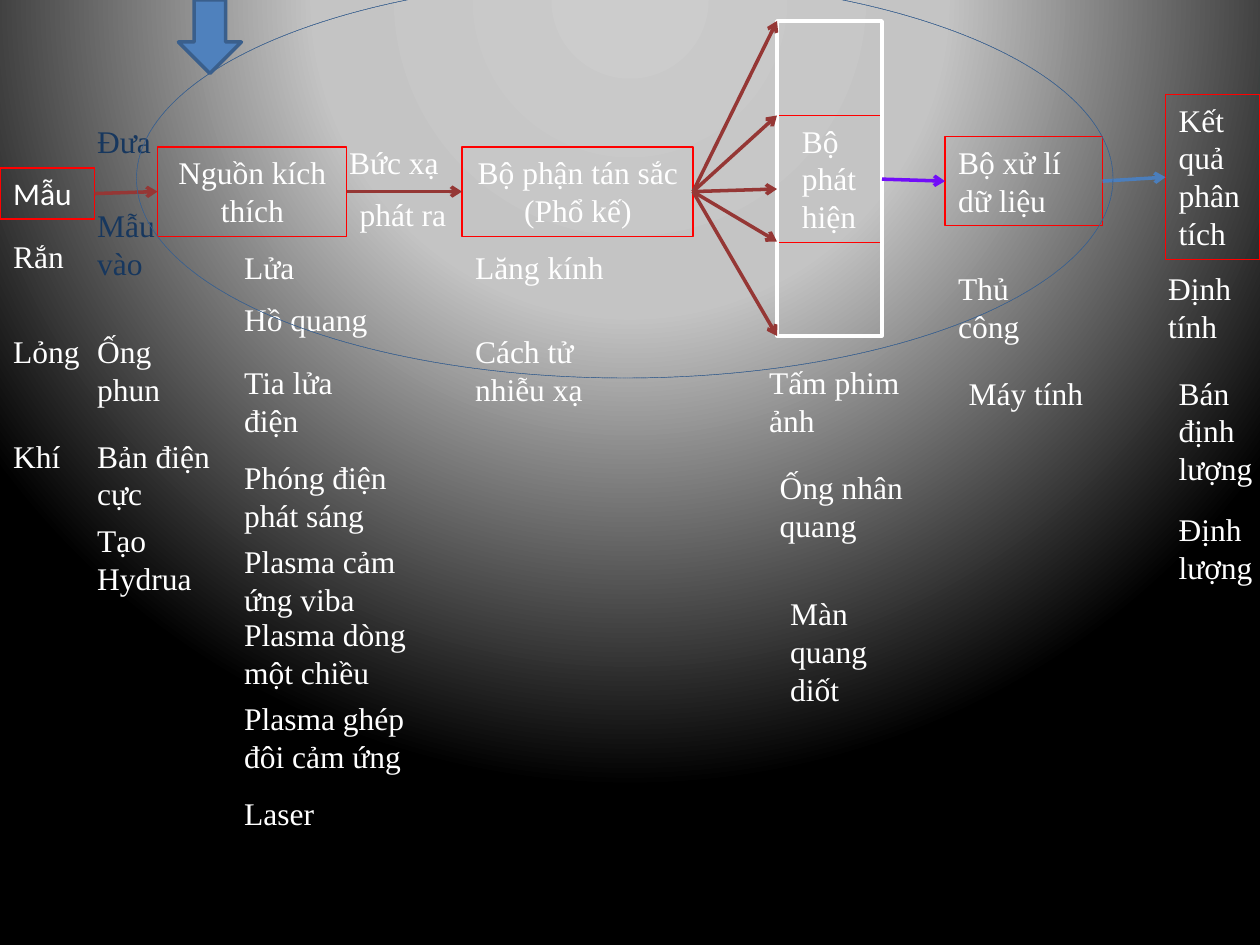
from dataclasses import dataclass

from lxml import etree
from pptx import Presentation
from pptx.dml.color import RGBColor
from pptx.enum.dml import MSO_LINE
from pptx.enum.shapes import MSO_CONNECTOR, MSO_SHAPE
from pptx.enum.text import MSO_ANCHOR, MSO_AUTO_SIZE, PP_ALIGN
from pptx.oxml import parse_xml
from pptx.oxml.ns import nsdecls, qn
from pptx.util import Pt

PX = 9525  # 96 px to the inch


@dataclass(frozen=True)
class Theme:
    font: str = "Times New Roman"
    plain: str = "Calibri"
    size: int = 18
    white: str = "FFFFFF"
    navy: str = "17375E"
    red: str = "FF0000"
    brown: str = "953735"
    violet: str = "720DF9"
    blue: str = "4B7EBC"
    fill: str = "4F81BD"
    edge: str = "3A5F8C"
    thin: float = 0.75
    hair: float = 0.25
    thick: float = 2
    glow: tuple = ((0, "CCCCCC"), (40, "C4C4C4"), (100, "000000"))


T = Theme()

# name: left, top, width, text rows, paragraphs, centred, font, left inset
STAGES = {
    "sample": (0, 128, 72, 1, ["Mẫu"], False, T.plain, 10),
    "source": (120, 112, 144, 2, ["Nguồn kích thích"], True, T.font, 10),
    "prism": (352, 112, 176, 2, ["Bộ phận tán sắc", "(Phổ kế)"], True, T.font, 10),
    "sensor": (592, 88, 80, 3, ["Bộ phát hiện"], False, T.font, 19),
    "computer": (720, 104, 120, 2, ["Bộ xử lí dữ liệu"], False, T.font, 10),
    "result": (888, 72, 72, 4, ["Kết quả phân tích"], False, T.font, 10),
}
FRAME = (592, 16, 80, 240)
FLOW = [
    ("sample", "source", T.brown),
    ("source", "prism", T.brown),
    ("sensor", "computer", T.violet),
    ("computer", "result", T.blue),
]
FAN = [16, 88, 144, 184, 256]  # heights where the rays meet the frame

# left, top, width, text rows, text
NOTES = {
    T.navy: [(64, 88, 72, 1, "Đưa"), (64, 152, 72, 2, "Mẫu vào")],
    T.white: [
        (0, 176, 72, 1, "Rắn"),
        (0, 248, 72, 1, "Lỏng"),
        (0, 328, 72, 1, "Khí"),
        (64, 248, 72, 2, "Ống phun"),
        (64, 328, 120, 2, "Bản điện cực"),
        (64, 392, 120, 2, "Tạo Hydrua"),
        (256, 104, 112, 1, "Bức xạ"),
        (264, 144, 112, 1, "phát ra"),
        (176, 184, 88, 1, "Lửa"),
        (176, 224, 120, 1, "Hồ quang"),
        (176, 272, 120, 2, "Tia lửa điện"),
        (176, 344, 144, 2, "Phóng điện phát sáng"),
        (176, 408, 136, 2, "Plasma cảm ứng viba"),
        (176, 464, 144, 2, "Plasma dòng một chiều"),
        (176, 528, 152, 2, "Plasma ghép đôi cảm ứng"),
        (176, 600, 128, 1, "Laser"),
        (352, 184, 144, 1, "Lăng kính"),
        (352, 248, 152, 2, "Cách tử nhiễu xạ"),
        (576, 272, 152, 2, "Tấm phim ảnh"),
        (584, 352, 152, 2, "Ống nhân quang"),
        (592, 448, 104, 3, "Màn quang diốt"),
        (720, 200, 96, 2, "Thủ công"),
        (728, 280, 120, 1, "Máy tính"),
        (880, 200, 104, 2, "Định tính"),
        (888, 280, 96, 3, "Bán định lượng"),
        (888, 384, 96, 2, "Định lượng"),
    ],
}
RING = (104, -16, 744, 304)
INLET = (136, 0, 48, 56)


def emu(*vals):
    return [v * PX for v in vals]


def tall(rows):
    """Height of a box that holds this many rows of text."""
    return 10 + 29 * rows


def tint(hue):
    return RGBColor.from_string(hue)


def write(shape, paras, hue=T.white, font=T.font, mid=False, inset=10):
    frame = shape.text_frame
    frame.word_wrap = True
    frame.auto_size = MSO_AUTO_SIZE.SHAPE_TO_FIT_TEXT
    frame.vertical_anchor = MSO_ANCHOR.TOP
    frame.margin_left = inset * PX
    for i, text in enumerate(paras):
        para = frame.add_paragraph() if i else frame.paragraphs[0]
        para.alignment = PP_ALIGN.CENTER if mid else PP_ALIGN.LEFT
        run = para.add_run()
        run.text = text
        run.font.name, run.font.size = font, Pt(T.size)
        run.font.color.rgb = tint(hue)


def draw(slide, kind, area, line, width, fill=None):
    shape = slide.shapes.add_shape(kind, *emu(*area))
    shape.shadow.inherit = False
    if fill:
        shape.fill.solid()
        shape.fill.fore_color.rgb = tint(fill)
    else:
        shape.fill.background()
    shape.line.color.rgb = tint(line)
    shape.line.width = Pt(width)
    return shape


def arrow(slide, start, end, hue):
    link = slide.shapes.add_connector(MSO_CONNECTOR.STRAIGHT, *emu(*start, *end))
    link.line.color.rgb = tint(hue)
    link.line.width = Pt(T.thick)
    etree.SubElement(link.line._get_or_add_ln(), qn("a:tailEnd"), type="arrow")
    etree.SubElement(link.element.spPr, qn("a:effectLst"))
    return link


def backdrop(slide):
    slide.background.fill.gradient()
    old = slide.element.find(".//" + qn("a:gradFill"))
    stops = "".join(
        f'<a:gs pos="{at * 1000}"><a:srgbClr val="{hue}"/></a:gs>' for at, hue in T.glow
    )
    new = parse_xml(
        f'<a:gradFill {nsdecls("a")} rotWithShape="1"><a:gsLst>{stops}</a:gsLst>'
        '<a:path path="circle"><a:fillToRect l="50000" t="-80000" r="50000" b="180000"/>'
        "</a:path></a:gradFill>"
    )
    old.getparent().replace(old, new)


def main():
    deck = Presentation()
    deck.slide_width, deck.slide_height = emu(960, 720)
    slide = deck.slides.add_slide(deck.slide_layouts[6])
    backdrop(slide)

    boxes = {}
    for name, (x, y, w, rows, paras, mid, font, inset) in STAGES.items():
        area = (x, y, w, tall(rows))
        boxes[name] = draw(slide, MSO_SHAPE.RECTANGLE, area, T.red, T.thin)
        write(boxes[name], paras, font=font, mid=mid, inset=inset)
    draw(slide, MSO_SHAPE.RECTANGLE, FRAME, T.white, T.thick)

    for start, end, hue in FLOW:
        link = arrow(slide, (0, 0), (0, 0), hue)
        link.begin_connect(boxes[start], 3)
        link.end_connect(boxes[end], 1)
    for y in FAN:
        ray = arrow(slide, (528, 146), (FRAME[0], y), T.brown)
        ray.begin_connect(boxes["prism"], 3)

    for hue, notes in NOTES.items():
        for x, y, w, rows, text in notes:
            box = slide.shapes.add_textbox(*emu(x, y, w, tall(rows)))
            write(box, [text], hue)

    ring = draw(slide, MSO_SHAPE.DONUT, RING, T.edge, T.hair, T.fill)
    ring.adjustments[0] = 0
    ring.line.dash_style = MSO_LINE.SQUARE_DOT
    draw(slide, MSO_SHAPE.DOWN_ARROW, INLET, T.edge, T.thick, T.fill)
    deck.save("out.pptx")


if __name__ == "__main__":
    main()
